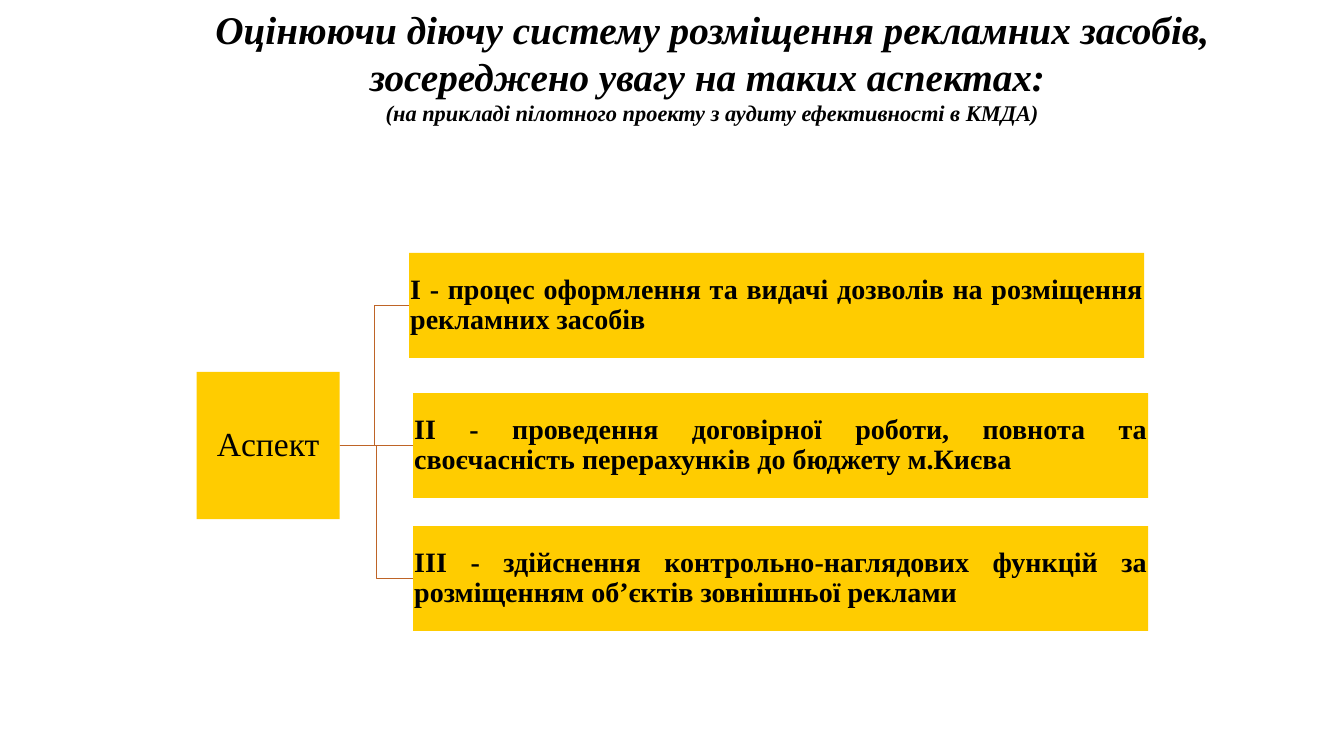
from lxml.etree import SubElement
from pptx import Presentation
from pptx.dml.color import RGBColor
from pptx.enum.shapes import MSO_CONNECTOR, MSO_SHAPE
from pptx.enum.text import MSO_ANCHOR, PP_ALIGN
from pptx.oxml.ns import qn
from pptx.util import Inches, Pt

WIDTH, HEIGHT = Inches(13.33), Inches(7.5)
COL, ROW = WIDTH / 100, HEIGHT / 100
FONT = "Times New Roman"
BLACK = RGBColor(0x00, 0x00, 0x00)
YELLOW = RGBColor(0xFF, 0xCC, 0x00)
BROWN = RGBColor(0xBE, 0x64, 0x27)

TITLE = [
    ("Оцінюючи діючу систему розміщення рекламних засобів, "
     "зосереджено увагу на таких аспектах: ", 28),
    ("(на прикладі пілотного проекту з аудиту ефективності в КМДА)", 16),
]
ROOT = "Аcпект"
ASPECTS = [
    ("І - процес оформлення та видачі дозволів на розміщення рекламних засобів",
     15.82, 0),
    ("ІІ - проведення договірної роботи, повнота та своєчасність "
     "перерахунків до бюджету м.Києва", 16.12, 18.53),
    ("ІІІ - здійснення контрольно-наглядових функцій за розміщенням "
     "об’єктів зовнішньої реклами", 16.12, 36.13),
]


def place(left, top, width, height):
    return [round(v) for v in (left * COL, top * ROW, width * COL, height * ROW)]


def style(paragraph, size, align, bold=False, italic=False):
    paragraph.alignment = align
    font = paragraph.font
    font.name, font.size = FONT, Pt(size)
    font.bold, font.italic = bold, italic
    font.color.rgb = BLACK


def add_heading(slide, box):
    frame = slide.shapes.add_textbox(*place(*box)).text_frame
    frame.word_wrap = True
    for index, (text, size) in enumerate(TITLE):
        line = frame.add_paragraph() if index else frame.paragraphs[0]
        line.text = text
        style(line, size, PP_ALIGN.CENTER, bold=True, italic=True)


def add_block(slide, box, text, size, align, bold, inset):
    block = slide.shapes.add_shape(MSO_SHAPE.RECTANGLE, *place(*box))
    block.shadow.inherit = False
    block.fill.solid()
    block.fill.fore_color.rgb = YELLOW
    block.line.fill.background()
    frame = block.text_frame
    frame.word_wrap = True
    frame.vertical_anchor = MSO_ANCHOR.MIDDLE
    frame.margin_left = frame.margin_right = Inches(inset)
    frame.margin_top = frame.margin_bottom = Inches(inset)
    label = frame.paragraphs[0]
    label.text = text
    label.line_spacing = 0.9
    style(label, size, align, bold)
    return block


def add_branch(slide, root, aspect, kind):
    branch = slide.shapes.add_connector(kind, 0, 0, 0, 0)
    branch.begin_connect(root, 3)
    branch.end_connect(aspect, 1)
    branch.line.color.rgb = BROWN
    branch.line.width = Pt(1)
    SubElement(branch._element.spPr, qn("a:effectLst"))


def add_hierarchy(slide, box):
    left, top, width, height = box
    block_width, block_height = 54.68, 13.87
    root_width, root_height = 10.65, 19.47
    middle = top + ASPECTS[1][2] + block_height / 2
    root = add_block(
        slide, (left, middle - root_height / 2, root_width, root_height),
        ROOT, 24, PP_ALIGN.CENTER, False, 0.02)
    for index, (text, across, down) in enumerate(ASPECTS):
        aspect = add_block(
            slide, (left + across, top + down, block_width, block_height),
            text, 20, PP_ALIGN.JUSTIFY, True, 0.01)
        kind = MSO_CONNECTOR.STRAIGHT if index == 1 else MSO_CONNECTOR.ELBOW
        add_branch(slide, root, aspect, kind)


def main():
    deck = Presentation()
    deck.slide_width, deck.slide_height = WIDTH, HEIGHT
    slide = deck.slides.add_slide(deck.slide_layouts[6])
    add_heading(slide, (10.8, 0, 84.4, 17.47))
    add_hierarchy(slide, (14.63, 33.47, 70.8, 50))
    deck.save("out.pptx")


if __name__ == "__main__":
    main()
